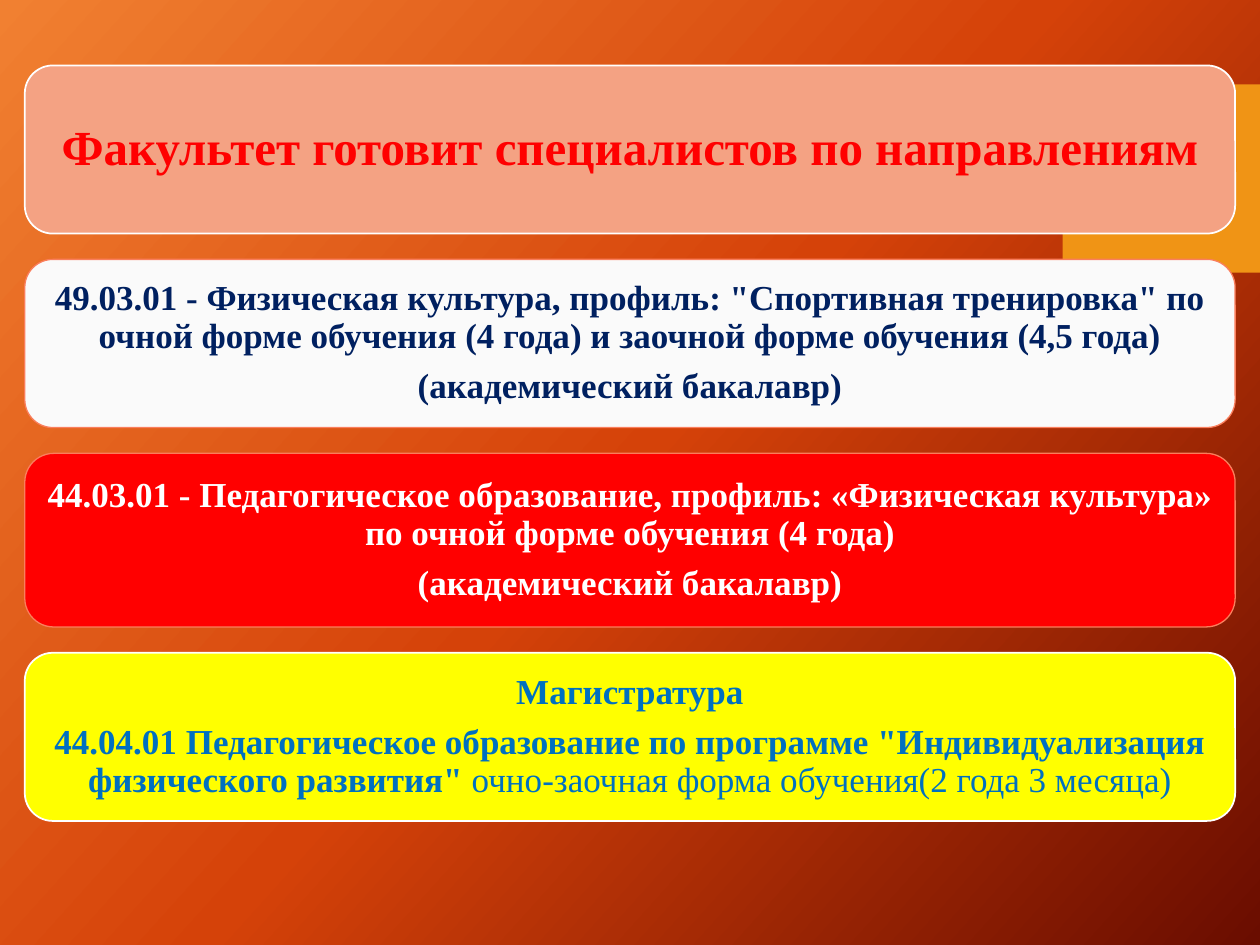
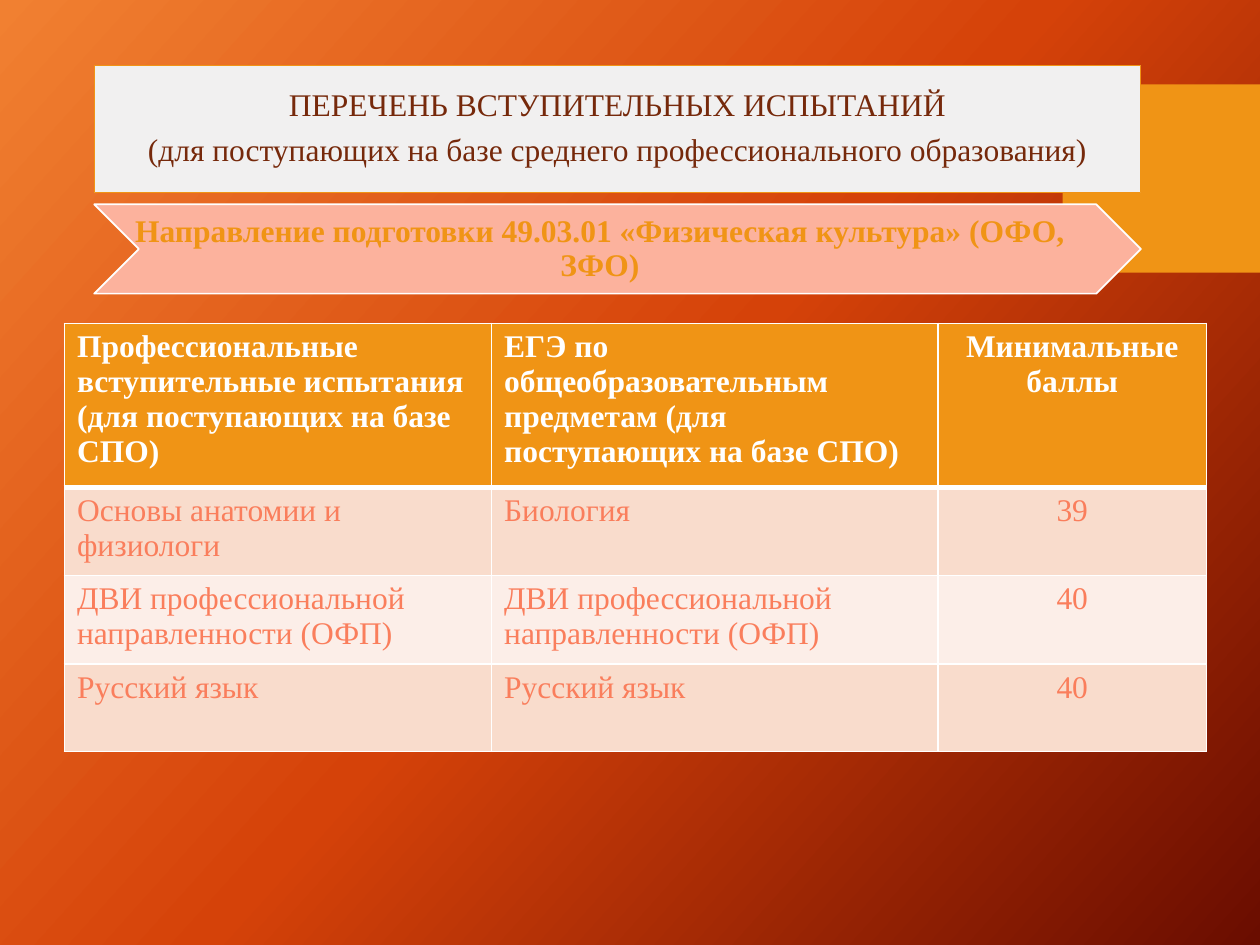
from copy import deepcopy

from lxml import etree
from pptx import Presentation
from pptx.dml.color import RGBColor
from pptx.enum.shapes import MSO_SHAPE
from pptx.enum.text import MSO_ANCHOR, PP_ALIGN
from pptx.oxml.ns import qn
from pptx.util import Cm, Pt

ROUND, RECT, ARROW = MSO_SHAPE.ROUNDED_RECTANGLE, MSO_SHAPE.RECTANGLE, MSO_SHAPE.CHEVRON
MIDDLE = MSO_ANCHOR.MIDDLE
LEFT, CENTER = PP_ALIGN.LEFT, PP_ALIGN.CENTER

FONT = "Times New Roman"
WHITE, ORANGE, CORAL = "FFFFFF", "F09415", "FA7E5C"
GLOW = [(0, "F18031"), (0.5, "D54209"), (1, "6A0D00")]
TOP = 1.32

# Slide 1: fill, line, line width, text colour, size, inset, height, paragraphs;
# a paragraph is a bold part and, where needed, a plain part
BOXES = [
    ("F4A283", WHITE, 1, "FF0000", 28, 0.3, 3.39,
     [("Факультет готовит специалистов по направлениям",)]),
    ("FAFAFA", CORAL, 0.75, "002060", 20, 0.2, 3.39,
     [('49.03.01 - Физическая культура, профиль: "Спортивная тренировка" по '
       "очной форме обучения (4 года) и заочной форме обучения (4,5 года)",),
      ("(академический бакалавр)",)]),
    ("FF0000", CORAL, 0.75, WHITE, 20, 0.2, 3.5,
     [("44.03.01 - Педагогическое образование, профиль: «Физическая культура» "
       "по очной форме обучения (4 года)",),
      ("(академический бакалавр)",)]),
    ("FFFF00", WHITE, 1, "0070C0", 20, 0.2, 3.39,
     [("Магистратура",),
      ('44.04.01 Педагогическое образование по программе "Индивидуализация '
       'физического развития"', " очно-заочная форма обучения(2 года 3 месяца)")]),
]
BOX_LEFT, BOX_WIDTH, BOX_GAP = 0.5, 24.4, 0.52

# Slide 2
TITLE = [("ПЕРЕЧЕНЬ ВСТУПИТЕЛЬНЫХ ИСПЫТАНИЙ",),
         ("(для поступающих на базе среднего профессионального образования)",)]
COURSE = [("Направление подготовки 49.03.01 «Физическая культура» (ОФО, ЗФО)",)]
EXAMS = [
    ("Профессиональные вступительные испытания (для поступающих на базе СПО)",
     "ЕГЭ по общеобразовательным предметам (для поступающих на базе СПО)",
     "Минимальные баллы"),
    ("Основы анатомии и физиологи", "Биология", "39"),
    ("ДВИ профессиональной направленности (ОФП)",
     "ДВИ профессиональной направленности (ОФП)", "40"),
    ("Русский язык", "Русский язык", "40"),
]
COLS = [8.61, 9.0, 5.41]
ROWS = [3.3, 1.77, 1.77, 1.77]
ROW_FILLS = [ORANGE, "F9DCCC", "FCEEE8", "F9DCCC"]


def rgb(code):
    return RGBColor.from_string(code)


def style(run, size, color, bold):
    run.font.name = FONT
    run.font.size = Pt(size)
    run.font.bold = bold
    run.font.color.rgb = rgb(color)


def shape(slide, kind, box, fill, line=None, width=1):
    item = slide.shapes.add_shape(kind, *map(Cm, box))
    item.shadow.inherit = False
    item.fill.solid()
    item.fill.fore_color.rgb = rgb(fill)
    if line:
        item.line.color.rgb = rgb(line)
        item.line.width = Pt(width)
    else:
        item.line.fill.background()
    return item


def write(item, paras, size, color, inset, bold=True):
    frame = item.text_frame
    frame.word_wrap = True
    frame.vertical_anchor = MIDDLE
    frame.margin_left = frame.margin_right = Cm(inset)
    frame.margin_top = frame.margin_bottom = Cm(inset)
    for i, parts in enumerate(paras):
        para = frame.add_paragraph() if i else frame.paragraphs[0]
        para.alignment = CENTER
        para.line_spacing = 0.9
        if i:
            para.space_before = Pt(0.35 * size)
        for j, part in enumerate(parts):
            run = para.add_run()
            run.text = part
            style(run, size, color, bold and j == 0)


def backdrop(deck):
    """Add a slide with the shared gradient and the orange tab."""
    slide = deck.slides.add_slide(deck.slide_layouts[6])
    fill = slide.background.fill
    fill.gradient()
    fill.gradient_angle = 318
    stops = slide.element.find(".//" + qn("a:gsLst"))
    stops.insert(1, deepcopy(stops[0]))
    for stop, (place, code) in zip(fill.gradient_stops, GLOW):
        stop.position = place
        stop.color.rgb = rgb(code)
    shape(slide, RECT, (21.42, 1.7, 3.98, 3.8), ORANGE)
    return slide


def border(cell, widths):
    """Draw white cell edges; widths run left, right, top, bottom."""
    props = cell._tc.get_or_add_tcPr()
    for i, (side, width) in enumerate(zip("LRTB", widths)):
        edge = etree.Element(qn("a:ln" + side), w=str(Pt(width)))
        paint = etree.SubElement(edge, qn("a:solidFill"))
        etree.SubElement(paint, qn("a:srgbClr"), val=WHITE)
        props.insert(i, edge)


def courses(deck):
    slide = backdrop(deck)
    top = TOP
    for fill, line, width, color, size, inset, height, paras in BOXES:
        box = shape(slide, ROUND, (BOX_LEFT, top, BOX_WIDTH, height), fill, line, width)
        write(box, paras, size, color, inset)
        top += height + BOX_GAP


def exams(deck):
    slide = backdrop(deck)
    # Title and course arrow
    title = shape(slide, RECT, (1.9, TOP, 21.1, 2.57), "F1F0F0", ORANGE, 0.5)
    write(title, TITLE, 18, "76290B", 0.18, bold=False)
    shape(slide, ARROW, (1.9, 4.12, 21.1, 1.8), "FCB29D", WHITE)
    label = slide.shapes.add_textbox(Cm(2.57), Cm(4.12), Cm(19.05), Cm(1.8))
    write(label, COURSE, 18, ORANGE, 0.03)

    # Exam table
    table = slide.shapes.add_table(len(ROWS), len(COLS), Cm(1.3), Cm(6.52),
                                   Cm(sum(COLS)), Cm(sum(ROWS))).table
    for col, width in zip(table.columns, COLS):
        col.width = Cm(width)
    for r, texts in enumerate(EXAMS):
        table.rows[r].height = Cm(ROWS[r])
        for c, text in enumerate(texts):
            cell = table.cell(r, c)
            cell.fill.solid()
            cell.fill.fore_color.rgb = rgb(ROW_FILLS[r])
            border(cell, (1, 1, 3 if r == 1 else 1, 3 if r == 0 else 1))
            para = cell.text_frame.paragraphs[0]
            para.text = text
            para.alignment = CENTER if c == 2 else LEFT
            style(para.runs[0], 18, CORAL if r else WHITE, r == 0)


def main():
    deck = Presentation()
    deck.slide_width, deck.slide_height = Cm(25.4), Cm(19.05)
    courses(deck)
    exams(deck)
    deck.save("out.pptx")


if __name__ == "__main__":
    main()
